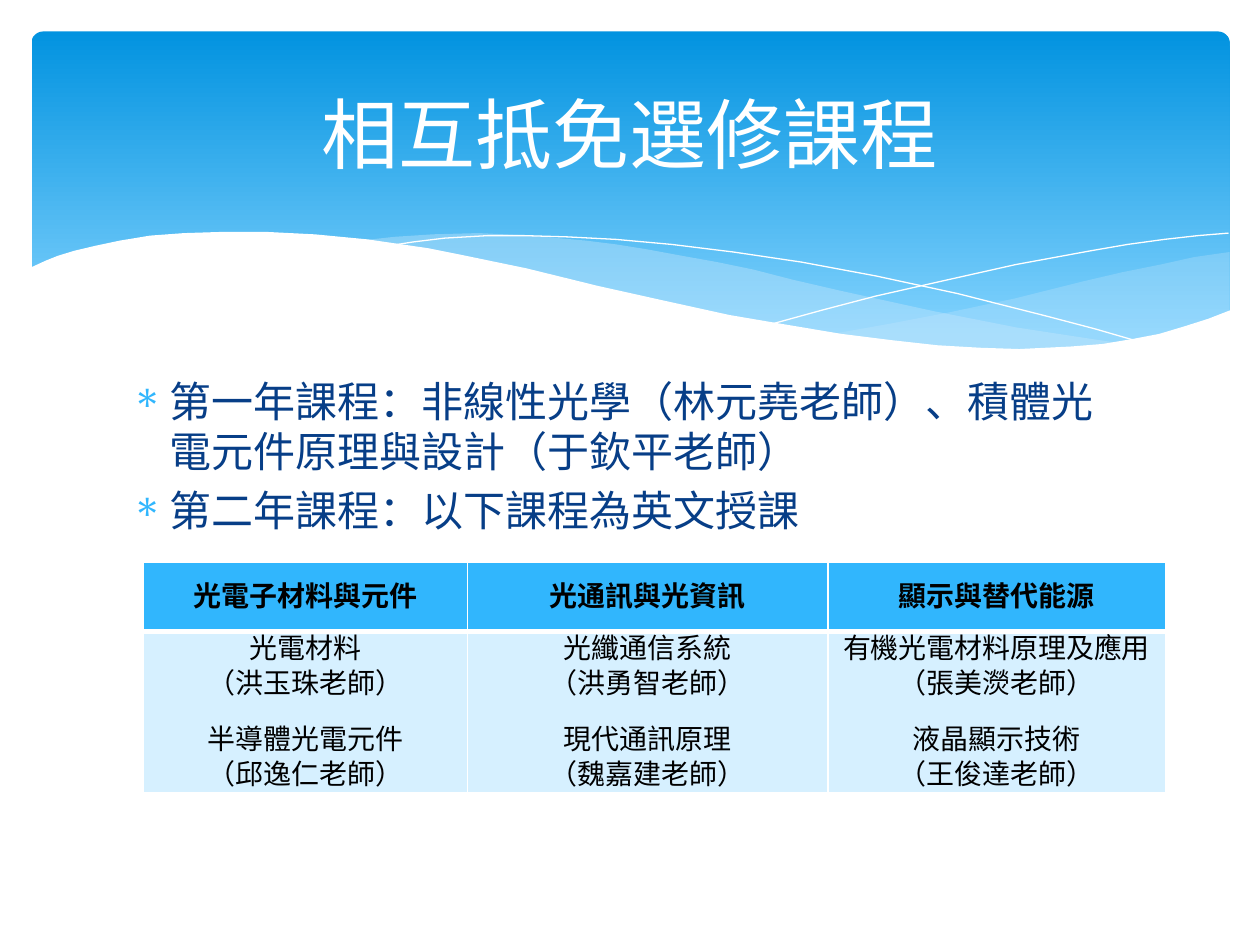
from lxml.etree import SubElement
from pptx import Presentation
from pptx.dml.color import RGBColor
from pptx.enum.shapes import MSO_SHAPE
from pptx.enum.text import MSO_ANCHOR, PP_ALIGN
from pptx.oxml.ns import qn
from pptx.util import Inches, Pt

WHITE = RGBColor(0xFF, 0xFF, 0xFF)
BLACK = RGBColor(0, 0, 0)
NAVY = RGBColor(0x07, 0x3E, 0x87)
SKY = RGBColor(0x31, 0xB6, 0xFD)
PALE = RGBColor(0xD6, 0xF0, 0xFF)
MIST = RGBColor(0xC6, 0xE7, 0xFC)
PANEL_TOP = RGBColor(0x02, 0x93, 0xE0)
PANEL_BOTTOM = RGBColor(0x83, 0xD3, 0xFE)
FONT = "Calibri"

RIGHT_WAVE = [
    (9.76, 2), (9.48, 2.04), (9.21, 2.1), (8.91, 2.16), (8.61, 2.23), (8.05, 2.37),
    (7.53, 2.48), (7.06, 2.57), (6.61, 2.65), (6.91, 2.69), (7.19, 2.72), (7.45, 2.75),
    (7.81, 2.77), (8.14, 2.78), (8.44, 2.77), (8.72, 2.74), (8.97, 2.7), (9.21, 2.65),
    (9.42, 2.59), (9.63, 2.52), (9.76, 2.47)]
MIDDLE_WAVE = [
    (8.93, 2.73), (8.66, 2.69), (8.07, 2.6), (7.41, 2.47), (6.68, 2.31), (6.29, 2.22),
    (5.98, 2.14), (5.69, 2.08), (5.41, 2.03), (5.14, 1.98), (4.89, 1.94), (4.65, 1.91),
    (4.2, 1.87), (3.8, 1.85), (3.44, 1.86), (3.13, 1.88), (2.86, 1.91), (3.23, 1.96),
    (3.62, 2.03), (4.04, 2.11), (4.49, 2.22), (4.91, 2.32), (5.66, 2.48), (6.18, 2.58),
    (6.5, 2.64), (6.8, 2.68), (7.09, 2.72), (7.36, 2.75), (7.73, 2.77), (8.07, 2.78),
    (8.38, 2.78), (8.67, 2.76)]
FALLING_LINE = [
    (3.09, 1.95), (3.28, 1.92), (3.53, 1.89), (3.87, 1.87), (4.16, 1.87), (4.5, 1.88),
    (4.89, 1.9), (5.33, 1.94), (5.82, 2), (6.36, 2.08), (6.95, 2.19), (7.6, 2.33),
    (8.31, 2.51), (8.69, 2.61), (9.07, 2.72)]
RISING_LINE = [
    (6.13, 2.57), (6.53, 2.46), (6.95, 2.35), (7.48, 2.23), (8.06, 2.1), (8.66, 1.99),
    (8.95, 1.94), (9.24, 1.9), (9.51, 1.87), (9.75, 1.85)]
WHITE_WAVE = [
    (9.77, 2.46), (9.59, 2.53), (9.4, 2.59), (9.2, 2.65), (8.99, 2.69), (8.75, 2.73),
    (8.5, 2.75), (8.09, 2.77), (7.78, 2.76), (7.44, 2.74), (7.08, 2.7), (6.68, 2.65),
    (6.26, 2.58), (5.79, 2.5), (5.29, 2.39), (4.75, 2.27), (4.18, 2.13), (3.65, 2.02),
    (3.4, 1.97), (2.92, 1.9), (2.5, 1.86), (2.11, 1.84), (1.77, 1.84), (1.46, 1.85),
    (1.19, 1.87), (0.95, 1.91), (0.76, 1.95), (0.59, 1.99), (0.46, 2.03), (0.36, 2.07),
    (0.23, 2.13), (0.23, 3.29), (9.77, 3.29)]

COURSES = [
    ("光電子材料與元件",
     ["光電材料", "（洪玉珠老師）", "半導體光電元件", "（邱逸仁老師）"]),
    ("光通訊與光資訊",
     ["光纖通信系統", "（洪勇智老師）", "現代通訊原理", "（魏嘉建老師）"]),
    ("顯示與替代能源",
     ["有機光電材料原理及應用", "（張美濙老師）", "液晶顯示技術", "（王俊達老師）"]),
]


def write_paragraph(paragraph, text, size, color, bold=False, align=None,
                    line_spacing=None, before=0, after=0):
    """Write formatted text into a paragraph."""
    run = paragraph.add_run()
    run.text = text
    run.font.name = FONT
    run.font.size = Pt(size)
    run.font.bold = bold
    run.font.color.rgb = color
    paragraph.alignment = align
    paragraph.line_spacing = line_spacing
    paragraph.space_before = Pt(before)
    paragraph.space_after = Pt(after)


def add_color(parent, color):
    """Append an RGB colour element and return it."""
    return SubElement(parent, qn("a:srgbClr"), val=str(color))


def add_wave(slide, points, left, top, fill=None, opacity=100):
    """Draw a filled wave, or a white hairline when no fill is given."""
    scaled = [(round(x * 100), round(y * 100)) for x, y in points]
    builder = slide.shapes.build_freeform(*scaled[0], scale=Inches(0.01))
    builder.add_line_segments(scaled[1:], close=fill is not None)
    wave = builder.convert_to_shape(left, top)
    wave.shadow.inherit = False
    if fill is None:
        wave.fill.background()
        wave.line.color.rgb = WHITE
        wave.line.width = Pt(0)
        return
    wave.fill.solid()
    wave.fill.fore_color.rgb = fill
    wave.line.fill.background()
    if opacity < 100:
        color = wave._element.spPr.find(qn("a:solidFill"))[0]
        SubElement(color, qn("a:alpha"), val=str(opacity * 1000))


def add_backdrop(slide, left, top):
    """Draw the gradient panel and its waves from the given corner."""
    panel = slide.shapes.add_shape(
        MSO_SHAPE.ROUNDED_RECTANGLE, left + Inches(0.25), top + Inches(0.25),
        Inches(9.51), Inches(2.7))
    panel.adjustments[0] = 0.034
    panel.shadow.inherit = False
    panel.line.fill.background()
    panel.fill.gradient()
    panel.fill.gradient_angle = 270
    stops = panel.fill.gradient_stops
    for stop, color, position in zip(stops, (PANEL_TOP, PANEL_BOTTOM), (0, 0.9)):
        stop.color.rgb = color
        stop.position = position
    add_wave(slide, RIGHT_WAVE, left, top, MIST, 29)
    add_wave(slide, MIDDLE_WAVE, left, top, MIST, 40)
    add_wave(slide, FALLING_LINE, left, top)
    add_wave(slide, RISING_LINE, left, top)
    add_wave(slide, WHITE_WAVE, left, top, WHITE)


def place_title(slide, text, left, top, width, height):
    """Move the title placeholder above the backdrop and fill it."""
    title = slide.shapes.title
    slide.shapes._spTree.append(title._element)
    title.left, title.top, title.width, title.height = left, top, width, height
    title.text_frame.vertical_anchor = MSO_ANCHOR.MIDDLE
    write_paragraph(title.text_frame.paragraphs[0], text, 44, WHITE,
                    align=PP_ALIGN.CENTER)


def add_bullets(slide, texts, left, top, width, height):
    """Add a bulleted list in the given box."""
    frame = slide.shapes.add_textbox(left, top, width, height).text_frame
    frame.word_wrap = True
    for index, text in enumerate(texts):
        paragraph = frame.add_paragraph() if index else frame.paragraphs[0]
        write_paragraph(paragraph, text, 24, NAVY, before=4.8)
        properties = paragraph._p.get_or_add_pPr()
        properties.set("marL", str(Inches(0.3)))
        properties.set("indent", str(Inches(-0.3)))
        add_color(SubElement(properties, qn("a:buClr")), SKY)
        SubElement(properties, qn("a:buChar"), char="∗")


def format_cell(cell, fill, anchor, bottom_border):
    """Set a cell's margins, white borders and fill."""
    cell.margin_left = cell.margin_right = Inches(0.07)
    cell.margin_top = cell.margin_bottom = 0
    cell.vertical_anchor = anchor
    properties = cell._tc.get_or_add_tcPr()
    for side, width in (("L", 1), ("R", 1), ("T", 1), ("B", bottom_border)):
        border = SubElement(properties, qn(f"a:ln{side}"), w=str(Pt(width)))
        add_color(SubElement(border, qn("a:solidFill")), WHITE)
    cell.fill.solid()
    cell.fill.fore_color.rgb = fill


def add_course_table(slide, courses, left, top, width, height):
    """Add the table of course fields with their courses and teachers."""
    table = slide.shapes.add_table(2, len(courses), left, top, width, height).table
    table.rows[0].height = Inches(0.55)
    table.rows[1].height = height - Inches(0.55)
    for column, column_width in zip(table.columns, (2.57, 2.86, 2.68)):
        column.width = Inches(column_width)
    for index, (field, lines) in enumerate(courses):
        header, body = table.cell(0, index), table.cell(1, index)
        format_cell(header, SKY, MSO_ANCHOR.MIDDLE, 3)
        format_cell(body, PALE, MSO_ANCHOR.TOP, 1)
        write_paragraph(header.text_frame.paragraphs[0], field, 16, BLACK, bold=True,
                        align=PP_ALIGN.CENTER, line_spacing=Pt(20), after=12)
        for number, line in enumerate(lines):
            frame = body.text_frame
            paragraph = frame.add_paragraph() if number else frame.paragraphs[0]
            write_paragraph(paragraph, line, 16, BLACK, align=PP_ALIGN.CENTER,
                            line_spacing=Pt(20), before=12 if number == 2 else 0)


def main():
    """Build and save the slide."""
    presentation = Presentation()
    presentation.slide_width, presentation.slide_height = Inches(10), Inches(7.5)
    slide = presentation.slides.add_slide(presentation.slide_layouts[5])
    add_backdrop(slide, Inches(0), Inches(0))
    place_title(slide, "相互抵免選修課程",
                Inches(0.5), Inches(0.37), Inches(9), Inches(1.37))
    add_bullets(slide, [
        "第一年課程：非線性光學（林元堯老師）、積體光電元件原理與設計（于欽平老師）",
        "第二年課程：以下課程為英文授課",
    ], Inches(0.95), Inches(2.93), Inches(8.1), Inches(3.77))
    add_course_table(slide, COURSES,
                     Inches(1.14), Inches(4.46), Inches(8.11), Inches(1.82))
    presentation.save("out.pptx")


if __name__ == "__main__":
    main()
